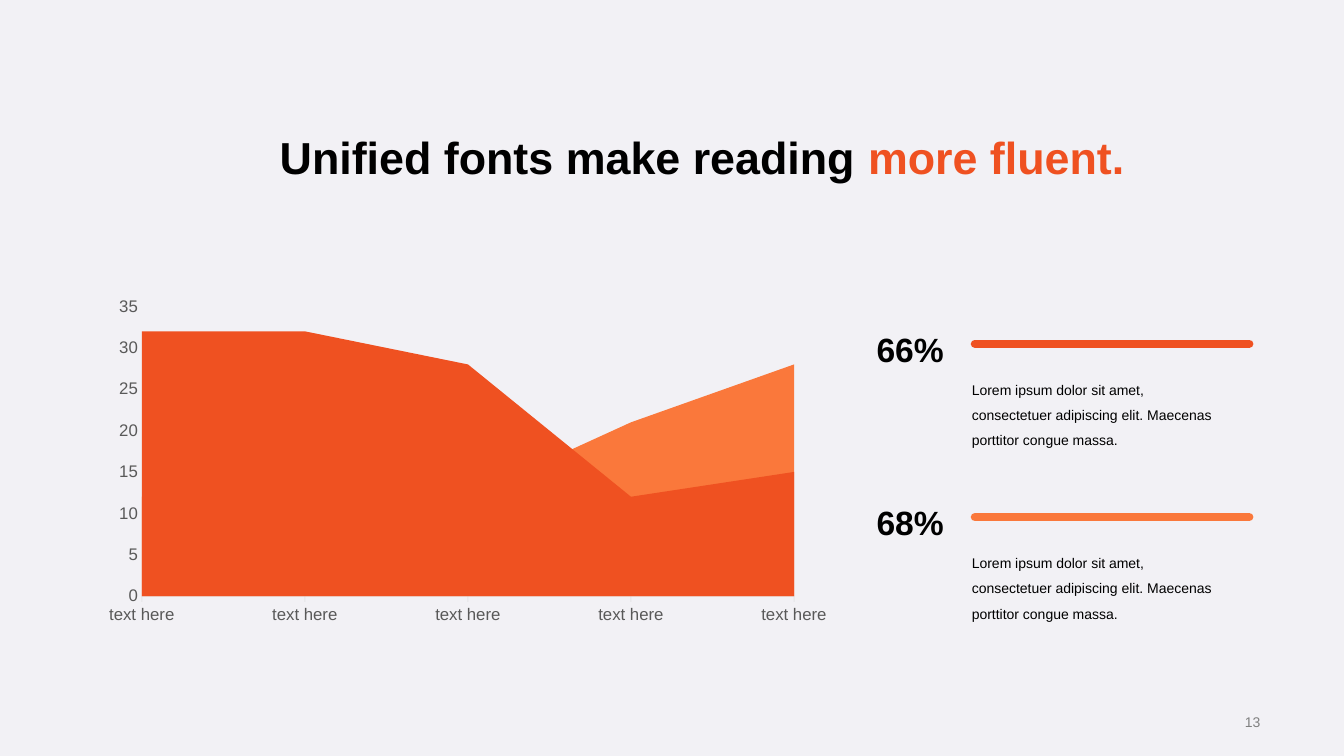
"""Builds a slide with an area chart beside two highlighted percentages."""
import dataclasses

import pptx
import pptx.chart.data
import pptx.dml.color
import pptx.enum.chart
import pptx.enum.shapes
import pptx.enum.text
import pptx.oxml
import pptx.oxml.ns
import pptx.util

Inches = pptx.util.Inches
Pt = pptx.util.Pt
Align = pptx.enum.text.PP_ALIGN
Anchor = pptx.enum.text.MSO_ANCHOR
qn = pptx.oxml.ns.qn


@dataclasses.dataclass(frozen=True)
class Theme:
    font: str = "Arial"
    background: str = "F2F1F5"
    ink: str = "000000"
    muted: str = "808080"
    axis_text: str = "595959"
    axis_line: str = "D9D9D9"
    primary: str = "EF5121"
    secondary: str = "FA783B"
    title_size: int = 32
    figure_size: int = 24
    axis_size: int = 12
    body_size: int = 10


def rgb(color):
    return pptx.dml.color.RGBColor.from_string(color)


def xml(prefix, markup):
    declaration = pptx.oxml.ns.nsdecls(prefix)
    return pptx.oxml.parse_xml(markup.replace(" ", f" {declaration} ", 1))


class SlideBuilder:
    def __init__(self, page, theme):
        self.page = page
        self.theme = theme
        page.background.fill.solid()
        page.background.fill.fore_color.rgb = rgb(theme.background)

    def set_font(self, font, size, color, bold=False):
        font.name = self.theme.font
        font.size = Pt(size)
        font.bold = bold
        font.color.rgb = rgb(color)

    def title(self, place, spans):
        shape = self.page.shapes.title
        shape.left, shape.top, shape.width, shape.height = map(Inches, place)
        frame = shape.text_frame
        frame.word_wrap = True
        frame.auto_size = pptx.enum.text.MSO_AUTO_SIZE.NONE
        frame.vertical_anchor = Anchor.BOTTOM
        para = frame.paragraphs[0]
        para.alignment = Align.CENTER
        para.line_spacing = 1.0
        self.set_font(para.font, self.theme.title_size, self.theme.ink, True)
        for text, color in spans:
            span = para.add_run()
            span.text = text
            span.font.color.rgb = rgb(color)

    def text(self, place, text, size, color, bold=False, align=Align.LEFT,
             anchor=Anchor.TOP, spacing=1.0, wrap=True):
        box = self.page.shapes.add_textbox(*map(Inches, place))
        frame = box.text_frame
        frame.word_wrap = wrap
        frame.vertical_anchor = anchor
        para = frame.paragraphs[0]
        para.text = text
        para.alignment = align
        para.line_spacing = spacing
        self.set_font(para.font, size, color, bold)

    def bar(self, left, right, y, color):
        line = self.page.shapes.add_connector(
            pptx.enum.shapes.MSO_CONNECTOR.STRAIGHT,
            Inches(right), Inches(y), Inches(left), Inches(y))
        line.line.color.rgb = rgb(color)
        line.line.width = Pt(6)
        properties = line._element.spPr
        properties.find(qn("a:ln")).set("cap", "rnd")
        properties.append(xml("a", "<a:effectLst />"))

    def area_chart(self, place, categories, series):
        data = pptx.chart.data.CategoryChartData()
        data.categories = categories
        for name, values, _ in series:
            data.add_series(name, values)
        chart = self.page.shapes.add_chart(
            pptx.enum.chart.XL_CHART_TYPE.AREA, *map(Inches, place), data).chart
        chart.has_title = False
        chart.has_legend = False
        self.set_font(chart.font, self.theme.body_size, self.theme.ink)
        for plotted, (_, _, color) in zip(chart.plots[0].series, series):
            plotted.format.fill.solid()
            plotted.format.fill.fore_color.rgb = rgb(color)
            plotted.format.line.fill.background()
        self.format_axes(chart)
        self.place_plot(chart, x=0.063, y=0.045, w=0.873, h=0.855)

    def format_axes(self, chart):
        marks = pptx.enum.chart.XL_TICK_MARK
        for axis, mark in ((chart.category_axis, marks.OUTSIDE),
                           (chart.value_axis, marks.NONE)):
            axis.has_major_gridlines = False
            axis.major_tick_mark = mark
            axis.minor_tick_mark = marks.NONE
            self.set_font(axis.tick_labels.font, self.theme.axis_size,
                          self.theme.axis_text)
        line = chart.category_axis.format.line
        line.color.rgb = rgb(self.theme.axis_line)
        line.width = Pt(0.75)
        for color in chart.category_axis._element.spPr.iter(qn("a:srgbClr")):
            color.append(xml("a", '<a:alpha val="50000"/>'))
        values = chart.value_axis
        values.format.line.fill.background()
        values.minimum_scale, values.maximum_scale, values.major_unit = 0, 35, 5
        for crossing in values._element.iter(qn("c:crossBetween")):
            crossing.set("val", "midCat")

    def place_plot(self, chart, **fractions):
        area = chart._chartSpace.find(".//" + qn("c:plotArea"))
        for layout in area.findall(qn("c:layout")):
            area.remove(layout)
        modes = '<c:xMode val="edge"/><c:yMode val="edge"/>'
        sizes = "".join(f'<c:{key} val="{value}"/>'
                        for key, value in fractions.items())
        area.insert(0, xml("c", '<c:layout ><c:manualLayout><c:layoutTarget val="inner"/>'
                                f"{modes}{sizes}</c:manualLayout></c:layout>"))

    def highlight(self, y, figure, text, color):
        theme = self.theme
        self.text((8.55, y - 0.4, 0.91, 0.63), figure, theme.figure_size, theme.ink,
                  bold=True, align=Align.RIGHT, spacing=1.5, wrap=False)
        self.bar(9.67, 12.39, y, color)
        self.text((9.54, y + 0.24, 2.72, 0.83), text, theme.body_size, theme.ink,
                  spacing=1.5)


def main():
    theme = Theme()
    deck = pptx.Presentation()
    deck.slide_width, deck.slide_height = Inches(13.33), Inches(7.5)
    builder = SlideBuilder(deck.slides.add_slide(deck.slide_layouts[5]), theme)
    builder.title((1.9, 1.25, 10.13, 0.62),
                  [("Unified fonts make reading ", theme.ink),
                   ("more fluent.", theme.primary)])
    builder.area_chart((0.94, 2.89, 7.41, 3.36), ["text here"] * 5,
                       [("Series 1", (32, 32, 28, 12, 15), theme.primary),
                        ("Series 2", (12, 12, 12, 21, 28), theme.secondary)])
    body = ("Lorem ipsum dolor sit amet, consectetuer adipiscing elit. "
            "Maecenas porttitor congue massa.")
    for y, figure, color in ((3.41, "66%", theme.primary),
                             (5.13, "68%", theme.secondary)):
        builder.highlight(y, figure, body, color)
    builder.text((9.69, 7.04, 2.91, 0.24), "13", theme.body_size, theme.muted,
                 align=Align.RIGHT, anchor=Anchor.MIDDLE)
    deck.save("out.pptx")


if __name__ == "__main__":
    main()
